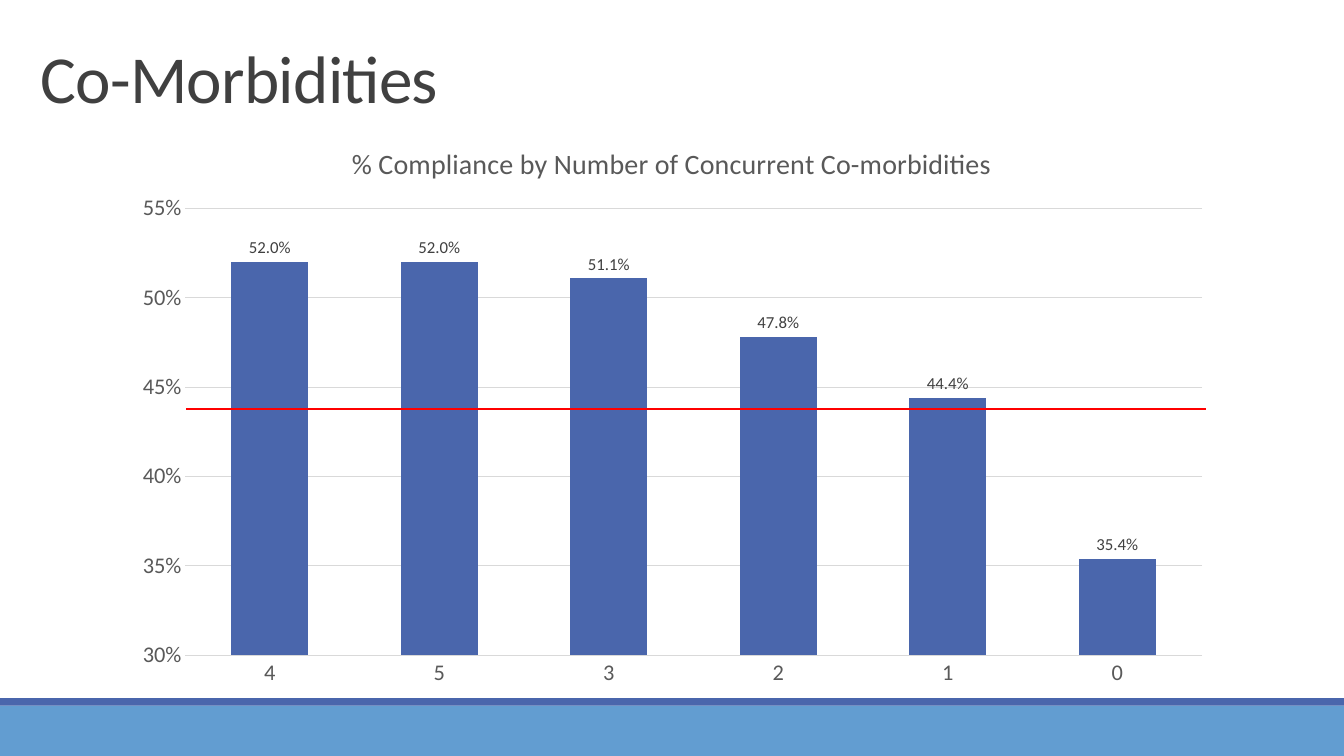
from typing import NamedTuple

from lxml.etree import SubElement
from pptx import Presentation
from pptx.chart.data import CategoryChartData
from pptx.dml.color import RGBColor
from pptx.enum.chart import XL_CHART_TYPE as ChartType, XL_LABEL_POSITION as LabelPos
from pptx.enum.chart import XL_TICK_MARK as TickMark
from pptx.enum.shapes import MSO_CONNECTOR as Connector, MSO_SHAPE as Shape
from pptx.enum.text import MSO_ANCHOR as Anchor, MSO_AUTO_SIZE as AutoSize, PP_ALIGN as Align
from pptx.oxml.ns import qn
from pptx.util import Pt

FONT = "Calibri"
COLORS = {
    "bar": "4A66AC",
    "footer": "629DD1",
    "dark": "404040",
    "grey": "595959",
    "grid": "D9D9D9",
    "average": "FF0000",
}


class Box(NamedTuple):
    left: float
    top: float
    width: float
    height: float

    def lengths(self) -> list[Pt]:
        return [Pt(v) for v in self]


class Band(NamedTuple):
    box: Box
    color: str


SLIDE_W, SLIDE_H = 960, 540
BANDS = [
    Band(Box(0, 504, SLIDE_W, 36), "footer"),
    Band(Box(0, 498.7, SLIDE_W, 5.3), "bar"),
]
TITLE = Box(21.6, -27.4, 792, 114.5)
CHART = Box(85.7, 87.1, 788.4, 411.8)
PLOT = Box(132.2, 149, 726.5, 319)
AVERAGE_Y = 292.1
COMPLIANCE = {"4": 0.52, "5": 0.52, "3": 0.511, "2": 0.478, "1": 0.444, "0": 0.354}


def rgb(name: str) -> RGBColor:
    return RGBColor.from_string(COLORS[name])


def style_font(font, size: float, color: str) -> None:
    font.name, font.size, font.bold = FONT, Pt(size), False
    font.color.rgb = rgb(color)


def style_line(line, color: str, width: float) -> None:
    line.color.rgb = rgb(color)
    line.width = Pt(width)


def add_band(slide, band: Band) -> None:
    sp = slide.shapes.add_shape(Shape.RECTANGLE, *band.box.lengths())
    sp.shadow.inherit = False
    sp.fill.solid()
    sp.fill.fore_color.rgb = rgb(band.color)
    sp.line.fill.background()


def set_title(slide, text: str) -> None:
    sp = slide.shapes.title
    sp.left, sp.top, sp.width, sp.height = TITLE.lengths()
    tf = sp.text_frame
    tf.text = text
    tf.word_wrap = True
    tf.auto_size = AutoSize.NONE
    tf.vertical_anchor = Anchor.BOTTOM
    p = tf.paragraphs[0]
    p.alignment = Align.LEFT
    p.line_spacing = 0.85
    style_font(p.font, 48, "dark")
    p.runs[0].font._element.set("spc", "-50")


def place_plot(chart) -> None:
    """Fix the inner plot area, given as fractions of the chart."""
    area = chart._chartSpace.chart.plotArea
    layout = area.find(qn("c:layout"))
    if layout is None:
        layout = SubElement(area, qn("c:layout"))
        area.insert(0, layout)
    manual = SubElement(layout, qn("c:manualLayout"))
    settings = {
        "layoutTarget": "inner",
        "xMode": "edge",
        "yMode": "edge",
        "x": (PLOT.left - CHART.left) / CHART.width,
        "y": (PLOT.top - CHART.top) / CHART.height,
        "w": PLOT.width / CHART.width,
        "h": PLOT.height / CHART.height,
    }
    for tag, value in settings.items():
        SubElement(manual, qn(f"c:{tag}")).set("val", str(value))


def add_compliance_chart(slide) -> None:
    data = CategoryChartData(number_format="0.0%")
    data.categories = list(COMPLIANCE)
    data.add_series("Series 1", list(COMPLIANCE.values()))
    frame = slide.shapes.add_chart(ChartType.COLUMN_CLUSTERED, *CHART.lengths(), data)
    chart = frame.chart
    style_font(chart.font, 10, "grey")
    chart.has_legend = False

    tf = chart.chart_title.text_frame
    tf.text = "% Compliance by Number of Concurrent Co-morbidities"
    style_font(tf.paragraphs[0].font, 20, "grey")
    chart.chart_title.include_in_layout = False

    for axis in (chart.category_axis, chart.value_axis):
        axis.major_tick_mark = axis.minor_tick_mark = TickMark.NONE
        style_font(axis.tick_labels.font, 16, "grey")
    style_line(chart.category_axis.format.line, "grid", 0.75)

    values = chart.value_axis
    values.minimum_scale, values.maximum_scale, values.major_unit = 0.3, 0.55, 0.05
    values.tick_labels.number_format = "0%"
    values.tick_labels.number_format_is_linked = False
    values.format.line.fill.background()
    style_line(values.major_gridlines.format.line, "grid", 0.75)

    plot = chart.plots[0]
    plot.vary_by_categories = False
    plot.gap_width, plot.overlap = 119, -27
    series = plot.series[0]
    series.format.fill.solid()
    series.format.fill.fore_color.rgb = rgb("bar")
    labels = series.data_labels
    labels.show_value = True
    labels.number_format = "0.0%"
    labels.number_format_is_linked = False
    labels.position = LabelPos.OUTSIDE_END
    style_font(labels.font, 12, "dark")
    place_plot(chart)


def add_average_line(slide) -> None:
    line = slide.shapes.add_connector(
        Connector.STRAIGHT, Pt(133.2), Pt(AVERAGE_Y), Pt(861.8), Pt(AVERAGE_Y)
    )
    style_line(line.line, "average", 1.5)
    SubElement(line._element.spPr, qn("a:effectLst"))


def main() -> None:
    prs = Presentation()
    prs.slide_width, prs.slide_height = Pt(SLIDE_W), Pt(SLIDE_H)
    slide = prs.slides.add_slide(prs.slide_layouts.get_by_name("Title Only"))
    for band in BANDS:
        add_band(slide, band)
    set_title(slide, "Co-Morbidities")
    add_compliance_chart(slide)
    add_average_line(slide)
    prs.save("out.pptx")


if __name__ == "__main__":
    main()
